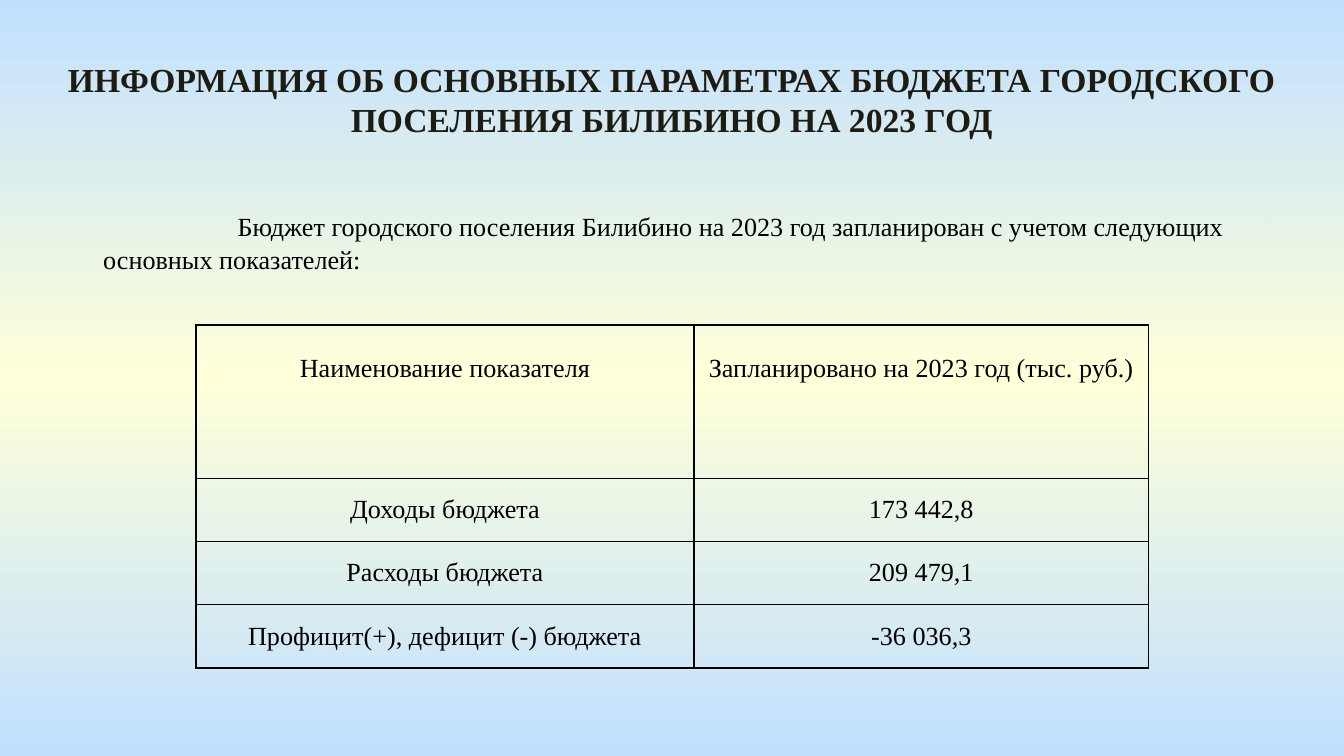
from copy import deepcopy

from pptx import Presentation
from pptx.dml.color import RGBColor
from pptx.enum.text import MSO_ANCHOR, PP_ALIGN
from pptx.oxml import parse_xml
from pptx.oxml.ns import nsdecls
from pptx.util import Inches, Pt

SKY = RGBColor(0xC1, 0xE0, 0xFF)
CREAM = RGBColor(0xFF, 0xFF, 0xD9)
DARK = RGBColor(0x1E, 0x1C, 0x11)
BLACK = RGBColor(0x00, 0x00, 0x00)

SERIF = "Times New Roman"
SANS = "Calibri"
TITLE_SIZE = 18
BODY_SIZE = 14


class BudgetSlide:
    """Places elements on a grid of 100 columns by 100 rows."""

    def __init__(self, presentation):
        self.column = presentation.slide_width / 100
        self.row = presentation.slide_height / 100
        self.slide = presentation.slides.add_slide(presentation.slide_layouts[6])

    def area(self, left, top, width, height):
        return (round(left * self.column), round(top * self.row),
                round(width * self.column), round(height * self.row))

    def background(self, edge, middle):
        fill = self.slide.background.fill
        fill.gradient()
        fill.gradient_angle = 270
        first, last = fill.gradient_stops
        for stop, position in ((first, 0), (last, 1)):
            stop.color.rgb = edge
            stop.position = position
        # A third stop, halfway between the edges
        first_stop = first._gs
        first_stop.addnext(deepcopy(first_stop))
        center = fill.gradient_stops[1]
        center.color.rgb = middle
        center.position = 0.5

    def format_run(self, run, size=BODY_SIZE, color=BLACK, font=SERIF, bold=False):
        run.font.name = font
        run.font.size = Pt(size)
        run.font.color.rgb = color
        run.font.bold = bold

    def text(self, area, parts, align=PP_ALIGN.LEFT, show_background=False):
        shape = self.slide.shapes.add_textbox(*self.area(*area))
        if show_background:
            shape._element.set("useBgFill", "1")
        shape.text_frame.word_wrap = True
        paragraph = shape.text_frame.paragraphs[0]
        paragraph.alignment = align
        # Tab stops one inch apart
        paragraph._p.get_or_add_pPr().set("defTabSz", str(Inches(1)))
        for words, style in parts:
            run = paragraph.add_run()
            run.text = words
            self.format_run(run, **style)

    def border(self, cell, color=BLACK, width=1):
        properties = cell._tc.get_or_add_tcPr()
        for index, side in enumerate("LRTB"):
            properties.insert(index, parse_xml(
                f'<a:ln{side} {nsdecls("a")} w="{Pt(width)}"><a:solidFill>'
                f'<a:srgbClr val="{color}"/></a:solidFill></a:ln{side}>'))

    def table(self, left, top, widths, heights, rows):
        area = self.area(left, top, sum(widths), sum(heights))
        table = self.slide.shapes.add_table(len(rows), len(widths), *area).table
        table.first_row = table.horz_banding = False
        for column, width in zip(table.columns, widths):
            column.width = round(width * self.column)
        for row, height, values in zip(table.rows, heights, rows):
            row.height = round(height * self.row)
            for cell, value in zip(row.cells, values):
                self.cell(cell, value)
        # The header sits one line below the top of its row
        for cell in table.rows[0].cells:
            cell.vertical_anchor = MSO_ANCHOR.TOP
            cell.margin_top = Inches(0.22)

    def cell(self, cell, value):
        cell.fill.background()
        cell.vertical_anchor = MSO_ANCHOR.MIDDLE
        cell.margin_left = cell.margin_right = Inches(0.07)
        cell.margin_top = cell.margin_bottom = 0
        cell.text_frame.text = value
        paragraph = cell.text_frame.paragraphs[0]
        paragraph.alignment = PP_ALIGN.CENTER
        self.format_run(paragraph.runs[0])
        self.border(cell)


def main():
    presentation = Presentation()
    presentation.slide_width = Inches(10)
    presentation.slide_height = presentation.slide_width * 9 // 16
    page = BudgetSlide(presentation)
    page.background(SKY, CREAM)

    # Introduction
    page.text((6.7, 25.96, 87.4, 11.38), [
        (" \t", {"size": TITLE_SIZE, "font": SANS}),
        ("Бюджет городского поселения Билибино на 2023 год запланирован "
         "с учетом следующих основных показателей:", {}),
    ], show_background=True)

    # Title
    page.text((3.5, 6.93, 93, 12.62), [
        ("ИНФОРМАЦИЯ ОБ ОСНОВНЫХ ПАРАМЕТРАХ БЮДЖЕТА ГОРОДСКОГО "
         "ПОСЕЛЕНИЯ БИЛИБИНО НА 2023 ГОД",
         {"size": TITLE_SIZE, "color": DARK, "bold": True}),
    ], align=PP_ALIGN.CENTER)

    # Budget figures
    page.table(14.57, 43, (37.08, 33.8), (20.27,) + (8.36,) * 3, [
        ("Наименование показателя", "Запланировано на 2023 год (тыс. руб.)"),
        ("Доходы бюджета", "173 442,8"),
        ("Расходы бюджета", "209 479,1"),
        ("Профицит(+), дефицит (-) бюджета", "-36 036,3"),
    ])

    presentation.save("out.pptx")


if __name__ == "__main__":
    main()
